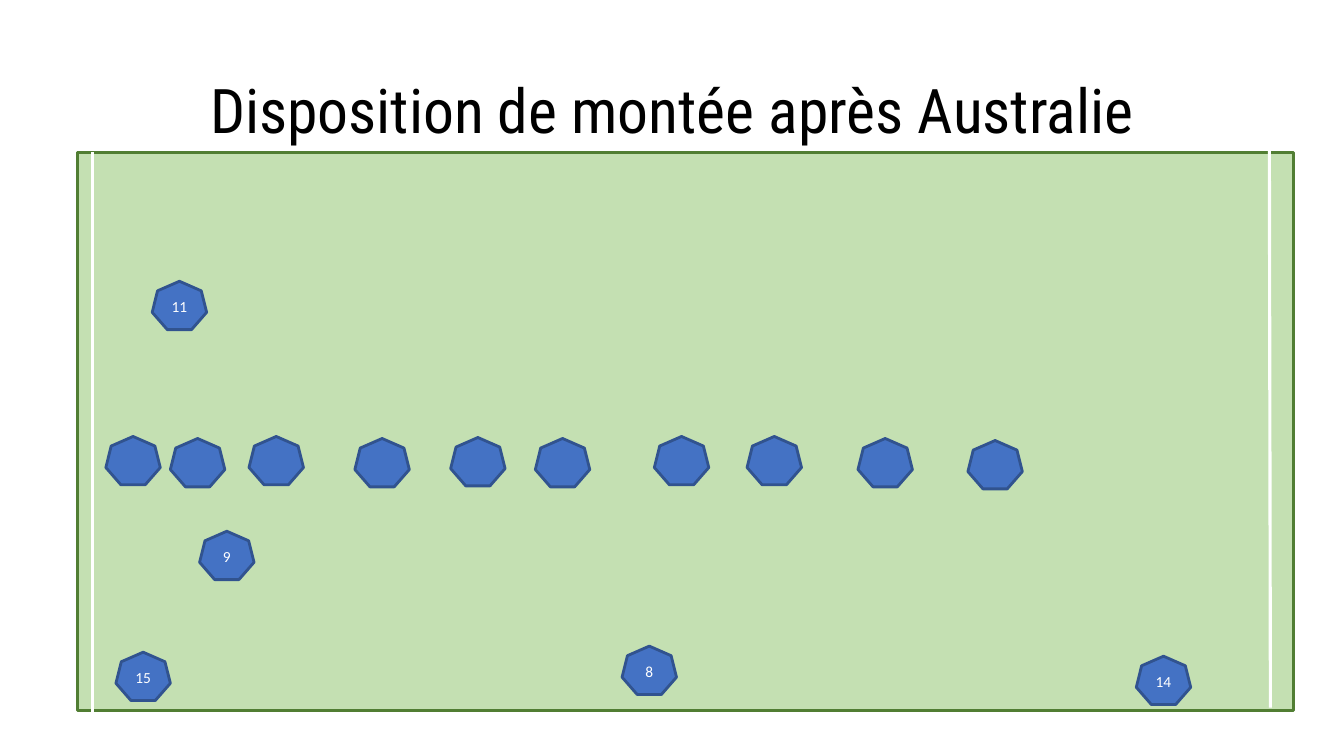
import dataclasses

import pptx
import pptx.dml.color
import pptx.enum.shapes
import pptx.enum.text
import pptx.oxml.ns
import pptx.util
from lxml import etree

EMU_PER_PX = 9144  # 100 px to the inch
PLAYER_WIDTH, PLAYER_HEIGHT = 54, 48
COLOURS = {
    "title": "000000",
    "grass": "C4E0B2",
    "pitch edge": "517E33",
    "player": "4472C4",
    "player edge": "31538F",
    "white": "FFFFFF",
}


@dataclasses.dataclass(frozen=True)
class Player:
    left: int
    top: int
    number: str = ""


@dataclasses.dataclass(frozen=True)
class PitchLine:
    x1: int
    y1: int
    x2: int
    y2: int


DEFENCE_LINE = [
    Player(105, 433), Player(169, 435), Player(247, 433), Player(352, 435),
    Player(447, 434), Player(531, 435), Player(649, 433), Player(741, 433),
    Player(851, 435), Player(960, 437),
]
NUMBERED_PLAYERS = [
    Player(151, 279, "11"), Player(198, 527, "9"), Player(115, 647, "15"),
    Player(617, 641, "8"), Player(1127, 651, "14"),
]
PITCH_LINES = [PitchLine(92, 151, 92, 723), PitchLine(1259, 148, 1260, 702)]


def px(length: int) -> pptx.util.Emu:
    return pptx.util.Emu(length * EMU_PER_PX)


def colour(name: str) -> pptx.dml.color.RGBColor:
    return pptx.dml.color.RGBColor.from_string(COLOURS[name])


def write(frame, text: str, font: str, size: int, ink: str, spacing: float) -> None:
    frame.word_wrap = True
    frame.vertical_anchor = pptx.enum.text.MSO_ANCHOR.MIDDLE
    para = frame.paragraphs[0]
    para.alignment = pptx.enum.text.PP_ALIGN.CENTER
    para.line_spacing = spacing
    span = para.add_run()
    span.text = text
    span.font.name = font
    span.font.size = pptx.util.Pt(size)
    span.font.color.rgb = colour(ink)


def add_filled(page, kind, left: int, top: int, width: int, height: int,
               fill: str, edge: str):
    shape = page.shapes.add_shape(kind, px(left), px(top), px(width), px(height))
    shape.shadow.inherit = False
    shape.fill.solid()
    shape.fill.fore_color.rgb = colour(fill)
    shape.line.color.rgb = colour(edge)
    shape.line.width = pptx.util.Pt(2)
    return shape


def add_player(page, player: Player) -> None:
    shape = add_filled(page, pptx.enum.shapes.MSO_SHAPE.HEPTAGON, player.left,
                       player.top, PLAYER_WIDTH, PLAYER_HEIGHT,
                       "player", "player edge")
    if player.number:
        write(shape.text_frame, player.number, "Calibri", 11, "white", 1.07)


def add_pitch_line(page, line: PitchLine) -> None:
    connector = page.shapes.add_connector(
        pptx.enum.shapes.MSO_CONNECTOR.STRAIGHT,
        px(line.x1), px(line.y1), px(line.x2), px(line.y2))
    connector.line.color.rgb = colour("white")
    connector.line.width = pptx.util.Pt(2.25)
    properties = connector.element.find(pptx.oxml.ns.qn("p:spPr"))
    etree.SubElement(properties, pptx.oxml.ns.qn("a:effectLst"))


def main() -> None:
    deck = pptx.Presentation()
    deck.slide_width, deck.slide_height = px(1333), px(750)
    page = deck.slides.add_slide(deck.slide_layouts.get_by_name("Title Only"))

    # Title
    title = page.shapes.title
    title.left, title.top, title.width, title.height = px(92), px(40), px(1150), px(145)
    write(title.text_frame, "Disposition de montée après Australie",
          "Roboto Condensed", 44, "title", 0.9)

    # Pitch
    add_filled(page, pptx.enum.shapes.MSO_SHAPE.RECTANGLE, 77, 151, 1206, 554,
               "grass", "pitch edge")

    # Players
    for player in DEFENCE_LINE + NUMBERED_PLAYERS:
        add_player(page, player)

    # White lines at both ends
    for line in PITCH_LINES:
        add_pitch_line(page, line)

    deck.save("out.pptx")


if __name__ == "__main__":
    main()
